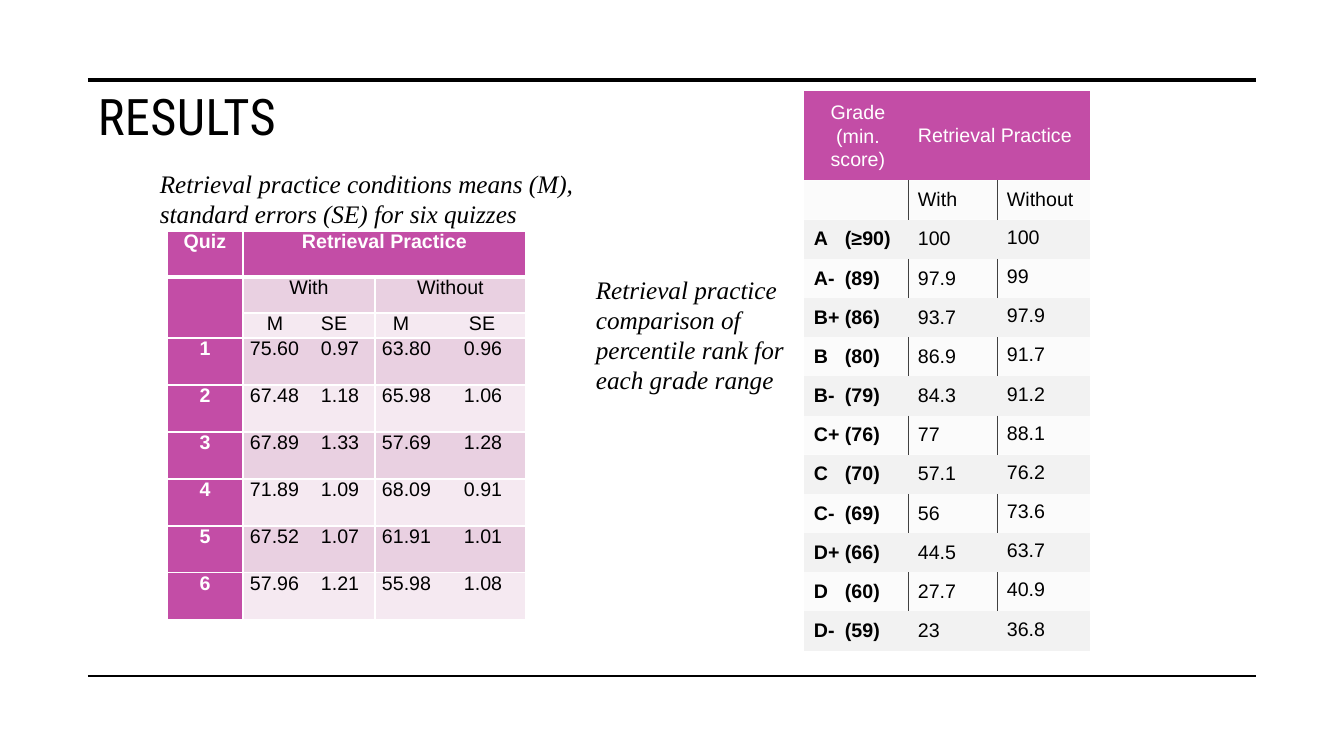
from dataclasses import dataclass

from lxml.etree import SubElement
from pptx import Presentation
from pptx.dml.color import RGBColor as RGB
from pptx.enum.shapes import MSO_CONNECTOR as CONN
from pptx.enum.text import MSO_ANCHOR as ANCHOR, PP_ALIGN as ALIGN
from pptx.oxml.ns import qn
from pptx.util import Emu, Pt


@dataclass(frozen=True)
class Theme:
    """Colours, fonts and type sizes of the slide."""
    ink: str = "000000"
    white: str = "FFFFFF"
    accent: str = "C34DA6"
    pink: str = "E9D0E1"
    pale: str = "F5E9F1"
    grey: str = "F2F2F2"
    rule: str = "404040"
    title_font: str = "Roboto Condensed"
    caption_font: str = "Times New Roman"
    table_font: str = "Arial"
    title_size: int = 36
    caption_size: int = 18
    table_size: int = 14
    plain_table: str = "{2D5ABB26-0587-4C30-8999-92F81FD0307C}"


class Deck:
    """Draws elements on the current slide in the theme's style."""

    def __init__(self, theme, width, height):
        """Start a presentation with one blank slide."""
        self.theme = theme
        self.prs = Presentation()
        self.prs.slide_width, self.prs.slide_height = self.px(width), self.px(height)
        self.slide = self.prs.slides.add_slide(self.prs.slide_layouts[6])

    def px(self, n):
        """Turn pixels into EMU."""
        return Emu(round(n * 914400 / 100.8))

    def style(self, p, font, size, color, bold=False, italic=False):
        """Format every run of a paragraph."""
        for r in p.runs:
            r.font.name, r.font.size = font, Pt(size)
            r.font.bold, r.font.italic = bold, italic
            r.font.color.rgb = RGB.from_string(color)

    def text(self, box, text, font, size, italic=False):
        """Add a wrapping text box and return its paragraph."""
        sp = self.slide.shapes.add_textbox(*map(self.px, box))
        tf = sp.text_frame
        tf.word_wrap = True
        tf.text = text
        self.style(tf.paragraphs[0], font, size, self.theme.ink, italic=italic)
        return tf.paragraphs[0]

    def title(self, box, text):
        """Add the slide title."""
        p = self.text(box, text, self.theme.title_font, self.theme.title_size)
        p.runs[0].font._element.set("spc", "30")

    def caption(self, box, text):
        """Add an italic table caption."""
        self.text(box, text, self.theme.caption_font, self.theme.caption_size, True)

    def line(self, x1, x2, y, weight):
        """Add a horizontal rule."""
        ln = self.slide.shapes.add_connector(CONN.STRAIGHT, *map(self.px, (x1, y, x2, y)))
        ln.line.color.rgb = RGB.from_string(self.theme.ink)
        ln.line.width = Pt(weight)
        SubElement(ln._element.spPr, qn("a:effectLst"))

    def table(self, x, y, cols, rows):
        """Add an unstyled table with the given column and row sizes."""
        box = map(self.px, (x, y, sum(cols), sum(rows)))
        tbl = self.slide.shapes.add_table(len(rows), len(cols), *box).table
        tbl.first_row = tbl.horz_banding = False
        tbl._tbl.tblPr.find(qn("a:tableStyleId")).text = self.theme.plain_table
        for col, width in zip(tbl.columns, cols):
            col.width = self.px(width)
        for row, height in zip(tbl.rows, rows):
            row.height = self.px(height)
        return tbl

    def border(self, cell, sides, color, weight):
        """Draw the named sides (of L, R, T, B) of a cell."""
        for side in sides:
            ln = SubElement(cell._tc.get_or_add_tcPr(), qn("a:ln" + side), w=str(Pt(weight)))
            SubElement(SubElement(ln, qn("a:solidFill")), qn("a:srgbClr"), val=color)

    def cell(self, cell, text, fill, margins, color=None, bold=False, align=ALIGN.LEFT,
             spacing=None, tabs=(), alpha=None):
        """Fill a cell and set its text."""
        t = self.theme
        left, top, right, bottom = map(self.px, margins)
        cell.margin_left, cell.margin_top = left, top
        cell.margin_right, cell.margin_bottom = right, bottom
        cell.fill.solid()
        cell.fill.fore_color.rgb = RGB.from_string(fill)
        if alpha:
            clr = cell._tc.tcPr.find(qn("a:solidFill")).find(qn("a:srgbClr"))
            SubElement(clr, qn("a:alpha"), val=str(alpha * 1000))
        cell.text_frame.text = text
        for p in cell.text_frame.paragraphs:
            p.alignment = align
            if spacing:
                p.line_spacing = spacing
            if tabs:
                tab_list = SubElement(p._p.get_or_add_pPr(), qn("a:tabLst"))
                for stop in tabs:
                    SubElement(tab_list, qn("a:tab"), pos=str(self.px(stop)), algn="l")
            self.style(p, t.table_font, t.table_size, color or t.ink, bold)
            if not p.runs:
                SubElement(p._p, qn("a:endParaRPr"), sz=str(t.table_size * 100))


GRADES = [
    ("A\t(≥90)", "100", "100"), ("A-\t(89)", "97.9", "99"), ("B+\t(86)", "93.7", "97.9"),
    ("B\t(80)", "86.9", "91.7"), ("B-\t(79)", "84.3", "91.2"), ("C+\t(76)", "77", "88.1"),
    ("C\t(70)", "57.1", "76.2"), ("C-\t(69)", "56", "73.6"), ("D+\t(66)", "44.5", "63.7"),
    ("D\t(60)", "27.7", "40.9"), ("D-\t(59)", "23", "36.8"),
]
QUIZZES = [
    ("1", "75.60\t0.97", "63.80\t0.96"), ("2", "67.48\t1.18", "65.98\t1.06"),
    ("3", "67.89\t1.33", "57.69\t1.28"), ("4", "71.89\t1.09", "68.09\t0.91"),
    ("5", "67.52\t1.07", "61.91\t1.01"), ("6", "57.96\t1.21", "55.98\t1.08"),
]


def grade_table(deck):
    """Add the percentile ranks by grade."""
    t = deck.theme
    margins = (10, 7, 6, 7)
    tbl = deck.table(804, 91, (104, 89, 93), [86] + [38] * 12)
    tbl.cell(0, 1).merge(tbl.cell(0, 2))
    deck.cell(tbl.cell(0, 0), "Grade\n(min. score)", t.accent, margins, t.white,
              align=ALIGN.CENTER, spacing=1.07)
    deck.cell(tbl.cell(0, 1), "Retrieval Practice", t.accent, margins, t.white)
    for c in range(2):
        tbl.cell(0, c).vertical_anchor = ANCHOR.MIDDLE
    for i, row in enumerate([("", "With", "Without")] + GRADES, 1):
        for c, text in enumerate(row):
            cell = tbl.cell(i, c)
            if i % 2:
                deck.border(cell, ("R", "LR", "L")[c], t.rule, 0.5)
            deck.cell(cell, text, t.grey, margins, bold=c == 0,
                      spacing=1.07 if c < 2 or i == 1 else None,
                      tabs=(31,) if c == 0 else (), alpha=30 if i % 2 else None)


def quiz_table(deck):
    """Add the means and standard errors by quiz."""
    t = deck.theme
    tbl = deck.table(167, 231, (76, 132, 151), [46, 36, 25] + [47] * 6)
    tbl.cell(0, 1).merge(tbl.cell(0, 2))
    tbl.cell(1, 0).merge(tbl.cell(2, 0))
    heads = [("Quiz", "Retrieval Practice", ""), ("", "With", "Without"),
             ("", "\tM\tSE", "\tM\tSE")]
    for i, row in enumerate(heads + QUIZZES):
        for c, text in enumerate(row):
            cell = tbl.cell(i, c)
            head = i == 0 or c == 0
            deck.border(cell, "LRT", t.white, 1)
            deck.border(cell, "B", t.white, 3 if i == 0 else 1)
            stops = ((), (17, 71), (11, 87)) if i == 2 else ((), (71,), (82,))
            deck.cell(cell, text, t.accent if head else (t.pale, t.pink)[i % 2],
                      (7, 0, 7, 0), t.white if head else t.ink, head,
                      ALIGN.CENTER if head or i == 1 else ALIGN.LEFT,
                      tabs=stops[c] if i > 1 else ())


def main():
    """Build the results slide."""
    deck = Deck(Theme(), 1344, 756)
    deck.title((88, 80, 235, 66), "RESULTS")
    deck.line(88, 1256, 80, 3.5)
    deck.line(88, 1256, 676, 1)
    grade_table(deck)
    deck.caption((586, 269, 252, 132),
                 "Retrieval practice comparison of percentile rank for each grade range")
    quiz_table(deck)
    deck.caption((150, 163, 434, 72), "Retrieval practice conditions means (M), "
                 "standard errors (SE) for six quizzes")
    deck.prs.save("out.pptx")


if __name__ == "__main__":
    main()
